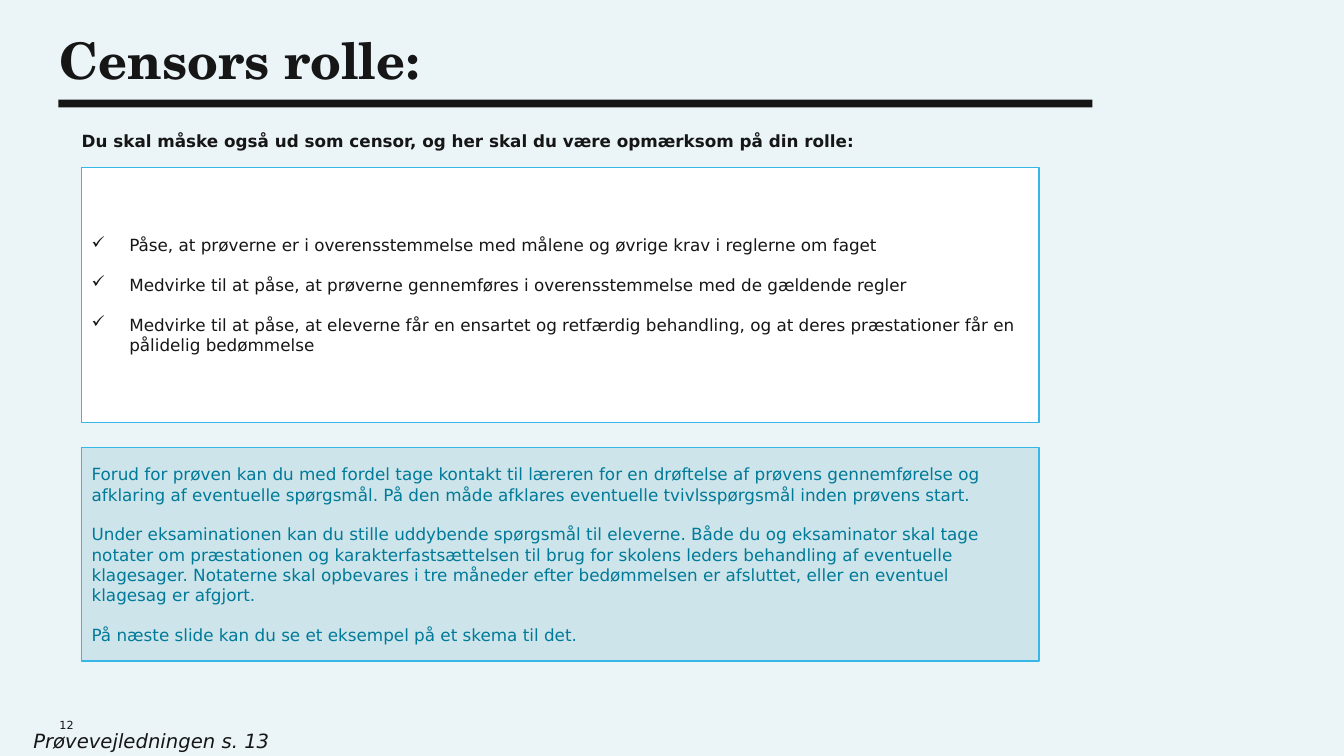
from lxml import etree
from pptx import Presentation
from pptx.dml.color import RGBColor
from pptx.enum.shapes import MSO_SHAPE
from pptx.enum.text import MSO_ANCHOR, PP_ALIGN
from pptx.oxml.ns import qn
from pptx.util import Cm, Pt

RECTANGLE = MSO_SHAPE.RECTANGLE
TOP, MIDDLE, BOTTOM = MSO_ANCHOR.TOP, MSO_ANCHOR.MIDDLE, MSO_ANCHOR.BOTTOM
LEFT = PP_ALIGN.LEFT

BACKGROUND = RGBColor(0xEB, 0xF4, 0xF7)
INK = RGBColor(0x16, 0x16, 0x16)
WHITE = RGBColor(0xFF, 0xFF, 0xFF)
PALE_BLUE = RGBColor(0xCC, 0xE4, 0xEA)
BORDER_BLUE = RGBColor(0x37, 0xB7, 0xE5)
TEAL = RGBColor(0x00, 0x7A, 0x98)

BODY_FONT = "DejaVu Sans"
TITLE_FONT = "TeX Gyre Schola"

PANEL_LEFT, PANEL_WIDTH = 2.06, 24.13

DUTIES = [
    "Påse, at prøverne er i overensstemmelse med målene og øvrige krav i reglerne om faget",
    "Medvirke til at påse, at prøverne gennemføres i overensstemmelse med de gældende regler",
    "Medvirke til at påse, at eleverne får en ensartet og retfærdig behandling, "
    "og at deres præstationer får en pålidelig bedømmelse",
]
ADVICE = [
    "Forud for prøven kan du med fordel tage kontakt til læreren for en drøftelse af prøvens "
    "gennemførelse og afklaring af eventuelle spørgsmål. På den måde afklares eventuelle "
    "tvivlsspørgsmål inden prøvens start.",
    "Under eksaminationen kan du stille uddybende spørgsmål til eleverne. Både du og eksaminator "
    "skal tage notater om præstationen og karakterfastsættelsen til brug for skolens leders "
    "behandling af eventuelle klagesager. Notaterne skal opbevares i tre måneder efter "
    "bedømmelsen er afsluttet, eller en eventuel klagesag er afgjort.",
    "På næste slide kan du se et eksempel på et skema til det.",
]


class SlideBuilder:
    def __init__(self, slide):
        self.slide = slide
        slide.background.fill.solid()
        slide.background.fill.fore_color.rgb = BACKGROUND

    def style(self, paragraph, size, color=INK, name=BODY_FONT, bold=False, italic=False):
        font = paragraph.font
        font.size, font.name, font.bold, font.italic = Pt(size), name, bold, italic
        font.color.rgb = color

    def check_mark(self, paragraph):
        properties = paragraph._p.get_or_add_pPr()
        properties.set("marL", str(Cm(0.95)))
        properties.set("indent", str(-Cm(0.95)))
        etree.SubElement(properties, qn("a:buChar")).set("char", "✓")

    def text(self, left, top, width, height, words, size, anchor=TOP, spacing=None, **look):
        box = self.slide.shapes.add_textbox(Cm(left), Cm(top), Cm(width), Cm(height))
        frame = box.text_frame
        frame.word_wrap = True
        frame.vertical_anchor = anchor
        frame.margin_left = frame.margin_right = frame.margin_top = frame.margin_bottom = 0
        paragraph = frame.paragraphs[0]
        paragraph.text = words
        paragraph.line_spacing = spacing
        self.style(paragraph, size, **look)

    def rectangle(self, left, top, width, height, fill, line=None):
        shape = self.slide.shapes.add_shape(RECTANGLE, Cm(left), Cm(top), Cm(width), Cm(height))
        shape.shadow.inherit = False
        shape.fill.solid()
        shape.fill.fore_color.rgb = fill
        if line is None:
            shape.line.fill.background()
        else:
            shape.line.color.rgb = line
            shape.line.width = Pt(1)
        return shape

    def panel(self, top, height, fill, color, texts, checked=False):
        shape = self.rectangle(PANEL_LEFT, top, PANEL_WIDTH, height, fill, BORDER_BLUE)
        frame = shape.text_frame
        frame.word_wrap = True
        frame.vertical_anchor = MIDDLE
        for index, words in enumerate(texts):
            paragraph = frame.add_paragraph() if index else frame.paragraphs[0]
            paragraph.text = words
            paragraph.alignment = LEFT
            if index:
                paragraph.space_before = Pt(14)
            if checked:
                self.check_mark(paragraph)
            self.style(paragraph, 12, color)


def main():
    presentation = Presentation()
    presentation.slide_width, presentation.slide_height = Cm(33.87), Cm(19.05)
    builder = SlideBuilder(presentation.slides.add_slide(presentation.slide_layouts[6]))

    # Title and rule
    builder.text(1.5, 0.99, 18.82, 2.49, "Censors rolle:", 36,
                 spacing=0.83, name=TITLE_FONT, bold=True)
    builder.rectangle(1.47, 2.51, 26.06, 0.2, INK)

    # Introduction and panels
    builder.text(PANEL_LEFT, 3.3, 28.83, 0.51,
                 "Du skal måske også ud som censor, og her skal du være opmærksom på din rolle:",
                 12, bold=True)
    builder.panel(4.22, 6.43, WHITE, INK, DUTIES, checked=True)
    builder.panel(11.28, 5.38, PALE_BLUE, TEAL, ADVICE)

    # Footer
    builder.text(1.5, 17.93, 0.76, 0.51, "12", 8, anchor=BOTTOM)
    builder.text(0.84, 18.36, 6.73, 0.61, "Prøvevejledningen s. 13", 14, italic=True)

    presentation.save("out.pptx")


if __name__ == "__main__":
    main()
